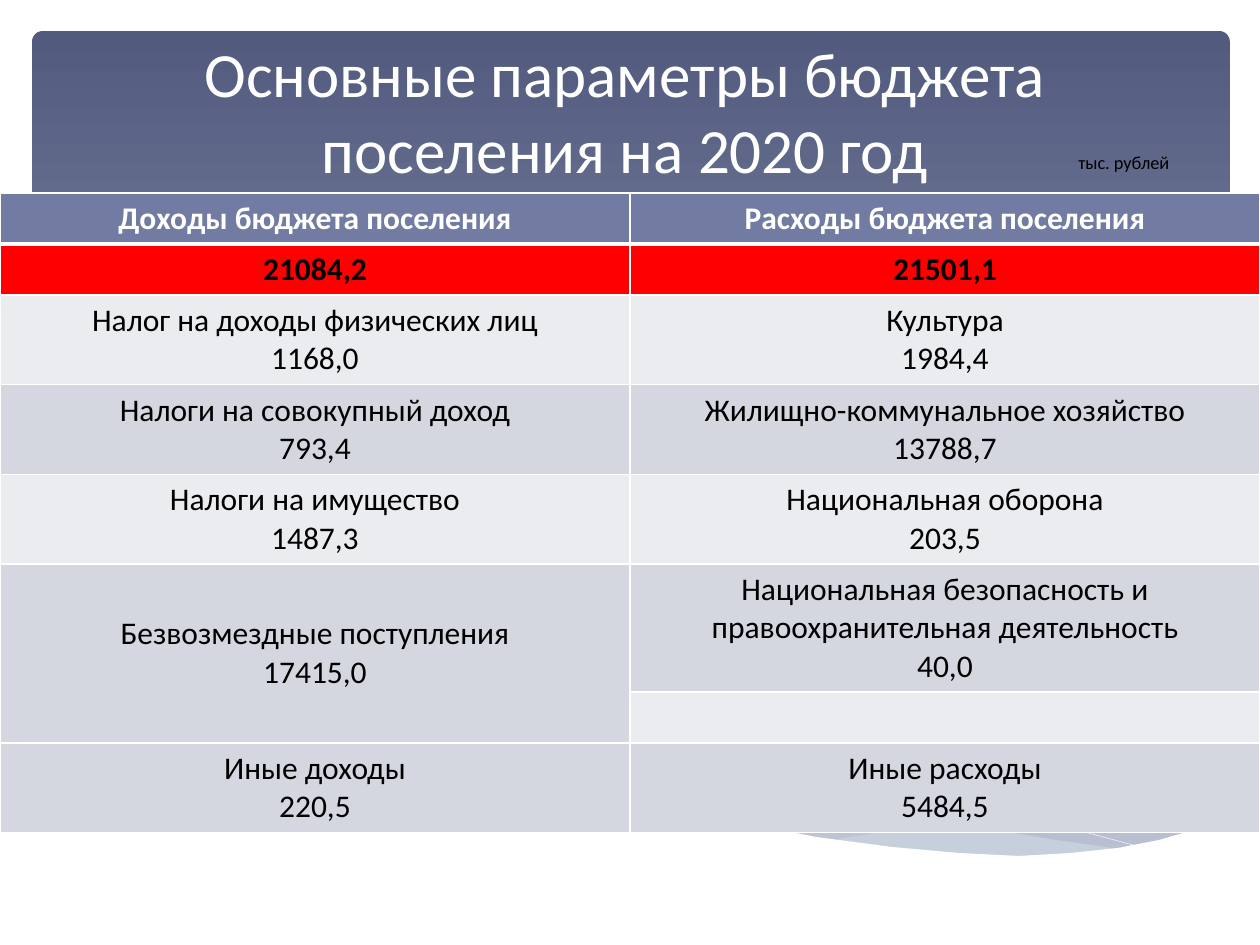
from lxml import etree
from pptx import Presentation
from pptx.dml.color import RGBColor
from pptx.enum.shapes import MSO_SHAPE
from pptx.enum.text import MSO_ANCHOR, MSO_AUTO_SIZE, PP_ALIGN
from pptx.oxml.ns import qn
from pptx.util import Emu, Pt

CENTER, LEFT = PP_ALIGN.CENTER, PP_ALIGN.LEFT
TOP, MIDDLE, BOTTOM = MSO_ANCHOR.TOP, MSO_ANCHOR.MIDDLE, MSO_ANCHOR.BOTTOM
NO_AUTOSIZE = MSO_AUTO_SIZE.NONE
ROUNDED = MSO_SHAPE.ROUNDED_RECTANGLE
TITLE_ONLY = 5
PX_PER_INCH = 126
FONT = "Calibri"
WHITE, BLACK, RED = "FFFFFF", "000000", "FF0000"
HEADER, LIGHT, DARK, MIST = "727CA3", "EBECF0", "D5D7E0", "DDE9EC"

# Wave outlines, relative to the left and top of the wave band
RIGHT_WAVE = [
    (1201, 19), (1150, 29), (1095, 41), (1057, 50), (987, 67), (921, 81),
    (862, 92), (805, 102), (861, 110), (926, 116), (984, 119), (1036, 118),
    (1082, 112), (1123, 105), (1160, 95), (1202, 80)]
MIDDLE_WAVE = [
    (1097, 112), (1027, 102), (949, 89), (862, 71), (765, 48), (670, 27),
    (587, 13), (500, 4), (427, 2), (367, 5), (333, 9), (403, 19), (481, 34),
    (538, 48), (639, 71), (729, 90), (810, 104), (882, 114), (946, 118),
    (1003, 119), (1053, 117)]
LONG_CURVE = [
    (362, 14), (404, 8), (478, 4), (562, 5), (643, 13), (738, 26), (848, 44),
    (974, 72), (1115, 110)]
RISING_CURVE = [
    (745, 92), (819, 72), (915, 50), (1026, 26), (1101, 13), (1201, 2)]
WHITE_WAVE = [
    (1202, 78), (1168, 91), (1130, 102), (1089, 110), (1042, 115), (990, 118),
    (930, 115), (863, 109), (787, 99), (701, 82), (605, 62), (534, 46),
    (431, 23), (339, 8), (261, 2), (194, 0), (121, 4), (67, 14), (21, 27),
    (0, 37), (0, 183), (1202, 183)]

# Row heights and (income, expense) cells; each cell is a list of paragraphs
ROWS = [
    (51, ["Доходы бюджета поселения"], ["Расходы бюджета поселения"]),
    (51, ["21084,2"], ["21501,1"]),
    (89, ["Налог на доходы физических лиц", "1168,0"], ["Культура", "1984,4"]),
    (89, ["Налоги на совокупный доход", "793,4"],
     ["Жилищно-коммунальное хозяйство", "13788,7"]),
    (89, ["Налоги на имущество", "1487,3"], ["Национальная оборона", "203,5"]),
    (128, ["Безвозмездные поступления", "17415,0"],
     ["Национальная безопасность и правоохранительная деятельность", "40,0"]),
    (51, [], []),
    (89, ["Иные доходы", "220,5"], ["Иные расходы", "5484,5"]),
]
MERGED_ROW = 5


def px(length):
    return Emu(round(length * 914400 / PX_PER_INCH))


def color(value):
    return RGBColor.from_string(value)


def write_text(frame, lines, size=18, ink=BLACK, bold=False, align=CENTER):
    for index, line in enumerate(lines):
        paragraph = frame.paragraphs[0] if index == 0 else frame.add_paragraph()
        paragraph.alignment = align
        run = paragraph.add_run()
        run.text = line
        run.font.name, run.font.size, run.font.bold = FONT, Pt(size), bold
        run.font.color.rgb = color(ink)


def add_outline(slide, left, top, points, fill=None, opacity=100):
    """Draw a filled closed outline, or a thin white open curve without fill."""
    start, *rest = [(left + x, top + y) for x, y in points]
    builder = slide.shapes.build_freeform(*start, scale=float(px(1)))
    builder.add_line_segments(rest, close=fill is not None)
    shape = builder.convert_to_shape()
    shape.shadow.inherit = False
    if fill is None:
        shape.fill.background()
        shape.line.color.rgb = color(WHITE)
        shape.line.width = Pt(0.25)
        return
    shape.fill.solid()
    shape.fill.fore_color.rgb = color(fill)
    shape.line.fill.background()
    if opacity < 100:
        fill_color = shape.fill._xPr.find(qn("a:solidFill"))[0]
        etree.SubElement(fill_color, qn("a:alpha")).set("val", str(opacity * 1000))


def add_backdrop(slide, left, top, width, height):
    # Gradient card
    card = slide.shapes.add_shape(ROUNDED, px(left), px(top), px(width), px(height))
    card.adjustments[0] = 0.013
    card.shadow.inherit = False
    card.line.fill.background()
    card.fill.gradient()
    card.fill.gradient_angle = 270
    for stop, (position, value) in zip(card.fill.gradient_stops,
                                       [(0, "525B7E"), (1, "AAB0C8")]):
        stop.position, stop.color.rgb = position, color(value)
    # Waves over the lower edge of the card
    wave_left, wave_top = left - 3, top + 707
    add_outline(slide, wave_left, wave_top, RIGHT_WAVE, MIST, 29)
    add_outline(slide, wave_left, wave_top, MIDDLE_WAVE, MIST, 40)
    add_outline(slide, wave_left, wave_top, LONG_CURVE)
    add_outline(slide, wave_left, wave_top, RISING_CURVE)
    add_outline(slide, wave_left, wave_top, WHITE_WAVE, WHITE)


def add_title(slide, left, top, width, height):
    title = slide.shapes.title
    title.left, title.top, title.width, title.height = map(
        px, (left, top, width, height))
    frame = title.text_frame
    frame.word_wrap, frame.auto_size = True, NO_AUTOSIZE
    frame.vertical_anchor = BOTTOM
    write_text(frame, ["Основные параметры бюджета поселения на 2020 год"],
               size=36, ink=WHITE)
    # Keep the title above the backdrop
    slide.shapes._spTree.append(title._element)


def set_borders(cell, **widths):
    properties = cell._tc.get_or_add_tcPr()
    for index, (side, width) in enumerate(widths.items()):
        line = etree.Element(qn("a:ln" + side), w=str(Pt(width)))
        fill = etree.SubElement(line, qn("a:solidFill"))
        etree.SubElement(fill, qn("a:srgbClr"), val=WHITE)
        properties.insert(index, line)


def add_budget_table(slide, left, top, width):
    height = sum(row[0] for row in ROWS)
    table = slide.shapes.add_table(
        len(ROWS), 2, px(left), px(top), px(width), px(height)).table
    for column in table.columns:
        column.width = px(width / 2)
    for row_index, (row_height, *cells) in enumerate(ROWS):
        table.rows[row_index].height = px(row_height)
        fill = {0: HEADER, 1: RED}.get(row_index, DARK if row_index % 2 else LIGHT)
        for column_index, lines in enumerate(cells):
            cell = table.cell(row_index, column_index)
            cell.fill.solid()
            cell.fill.fore_color.rgb = color(fill)
            cell.vertical_anchor = TOP
            write_text(cell.text_frame, lines, bold=row_index < 2,
                       ink=WHITE if row_index == 0 else BLACK)
            set_borders(cell, L=1, R=1, T=3 if row_index == 1 else 1,
                        B=3 if row_index == 0 else 1)
    # Transfers span two rows of expenses
    transfers = table.cell(MERGED_ROW, 0)
    transfers.merge(table.cell(MERGED_ROW + 1, 0))
    transfers.vertical_anchor = MIDDLE


def add_unit_note(slide, left, top, width, height):
    box = slide.shapes.add_textbox(px(left), px(top), px(width), px(height))
    box.text_frame.word_wrap = True
    write_text(box.text_frame, ["тыс. рублей"], size=10.5, align=LEFT)


def main():
    presentation = Presentation()
    presentation.slide_width, presentation.slide_height = px(1260), px(945)
    slide = presentation.slides.add_slide(presentation.slide_layouts[TITLE_ONLY])
    add_backdrop(slide, 32, 31, 1198, 832)
    add_title(slide, 84, 16, 1082, 176)
    add_budget_table(slide, 0, 193, 1260)
    add_unit_note(slide, 1066, 145, 179, 35)
    presentation.save("out.pptx")


if __name__ == "__main__":
    main()
